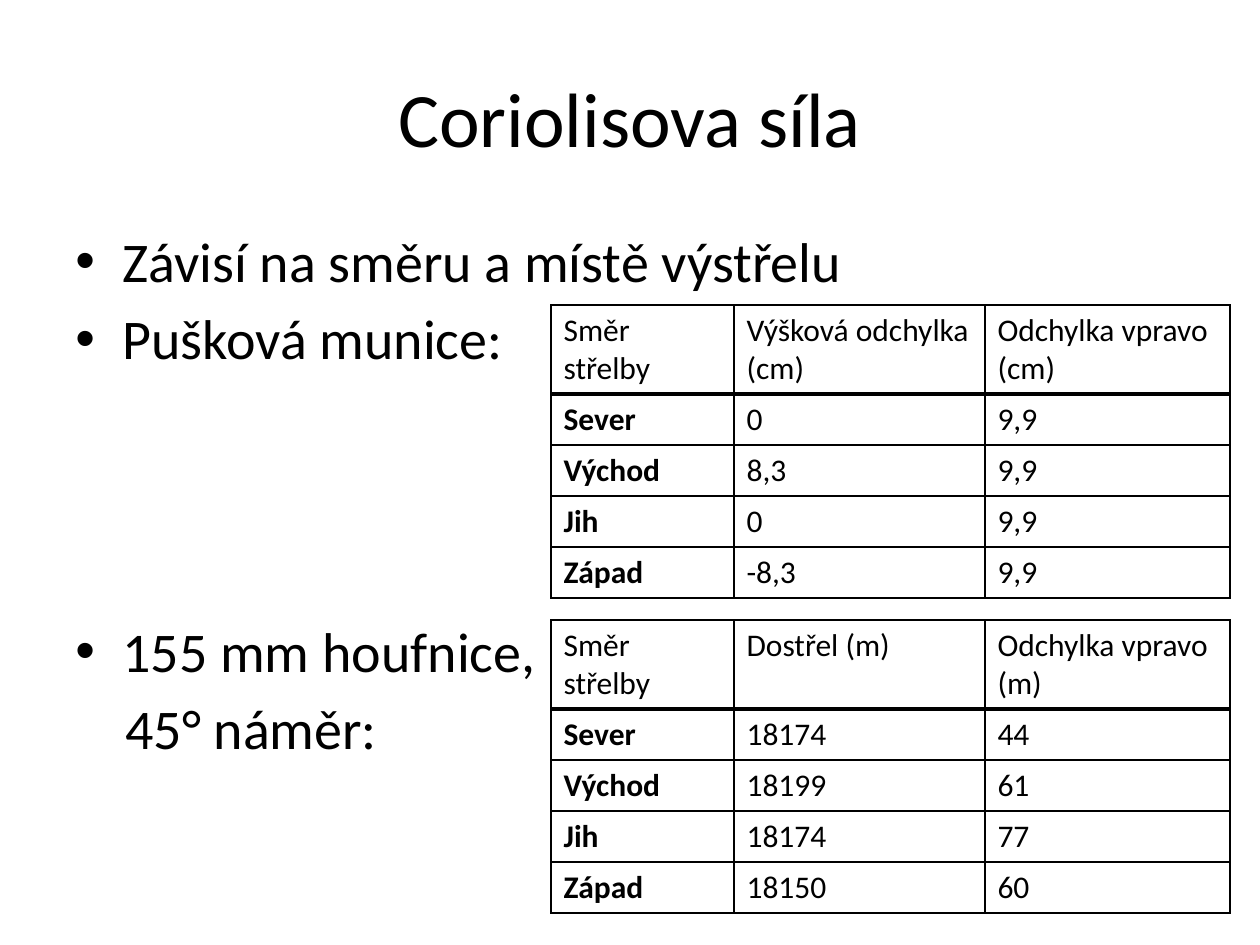
from lxml.etree import SubElement
from pptx import Presentation
from pptx.dml.color import RGBColor as Rgb
from pptx.enum.text import MSO_ANCHOR as Anchor, PP_ALIGN as Align
from pptx.oxml.ns import qn
from pptx.util import Pt

PX = 914400 / 126
COLORS = {"ink": "000000"}
DIRECTIONS = ["Sever", "Východ", "Jih", "Západ"]
COLUMNS = [183, 251, 245]
HEADER_HEIGHT, ROW_HEIGHT = 89, 51


def px(length):
    return round(length * PX)


def apply(target, values):
    for name, value in values.items():
        setattr(target, name, value)


def style_text(paragraph, size, bold=False):
    apply(paragraph.font, {"name": "Calibri", "size": Pt(size), "bold": bold})
    paragraph.font.color.rgb = Rgb.from_string(COLORS["ink"])


def place_title(slide, box, wording):
    title = slide.shapes.title
    apply(title, dict(zip(("left", "top", "width", "height"), map(px, box))))
    title.text_frame.text = wording
    title.text_frame.vertical_anchor = Anchor.MIDDLE
    heading = title.text_frame.paragraphs[0]
    heading.alignment = Align.CENTER
    style_text(heading, 44)


def place_points(slide, box, points):
    frame = slide.shapes.add_textbox(*map(px, box)).text_frame
    frame.word_wrap = True
    for number, (wording, space, bulleted) in enumerate(points):
        point = frame.add_paragraph() if number else frame.paragraphs[0]
        point.text = wording
        point.space_before = Pt(space)
        style_text(point, 32)
        props = point._p.get_or_add_pPr()
        props.set("marL", str(px(47 if bulleted else 50)))
        props.set("indent", str(px(-47 if bulleted else 0)))
        if bulleted:
            SubElement(props, qn("a:buFont"), typeface="Arial")
            SubElement(props, qn("a:buChar"), char="•")
        else:
            SubElement(props, qn("a:buNone"))


def draw_borders(cell, is_header, under_header):
    props = cell._tc.get_or_add_tcPr()
    widths = {
        "L": 1,
        "R": 1,
        "T": 2 if under_header else 1,
        "B": 2 if is_header else 1,
    }
    for side, width in widths.items():
        line = SubElement(props, qn(f"a:ln{side}"), w=str(Pt(width)))
        fill = SubElement(line, qn("a:solidFill"))
        SubElement(fill, qn("a:srgbClr"), val=COLORS["ink"])


def place_deviations(slide, left, top, headings, values):
    rows = [headings] + [[d, *pair] for d, pair in zip(DIRECTIONS, values)]
    heights = [HEADER_HEIGHT] + [ROW_HEIGHT] * len(values)
    box = (left, top, sum(COLUMNS), sum(heights))
    table = slide.shapes.add_table(len(rows), len(COLUMNS), *map(px, box)).table
    apply(table, {"first_row": False, "horz_banding": False})
    for column, width in zip(table.columns, COLUMNS):
        column.width = px(width)
    for r, (row, height) in enumerate(zip(rows, heights)):
        table.rows[r].height = px(height)
        for c, wording in enumerate(row):
            cell = table.cell(r, c)
            cell.text = wording
            style_text(cell.text_frame.paragraphs[0], 18, r > 0 and c == 0)
            draw_borders(cell, r == 0, r == 1)
            cell.fill.background()


def main():
    deck = Presentation()
    apply(deck, {"slide_width": px(1260), "slide_height": px(945)})
    slide = deck.slides.add_slide(deck.slide_layouts[5])
    place_title(slide, (63, 38, 1134, 157), "Coriolisova síla")
    place_points(slide, (63, 220, 1134, 624), [
        ("Závisí na směru a místě výstřelu", 6, True),
        ("Pušková munice:", 6, True),
        ("155 mm houfnice,", 140, True),
        ("45° náměr:", 6, False),
    ])
    place_deviations(
        slide, 551, 305,
        ["Směr střelby", "Výšková odchylka (cm)", "Odchylka vpravo (cm)"],
        [("0", "9,9"), ("8,3", "9,9"), ("0", "9,9"), ("-8,3", "9,9")],
    )
    place_deviations(
        slide, 551, 620,
        ["Směr střelby", "Dostřel (m)", "Odchylka vpravo (m)"],
        [("18174", "44"), ("18199", "61"), ("18174", "77"), ("18150", "60")],
    )
    deck.save("out.pptx")


if __name__ == "__main__":
    main()
